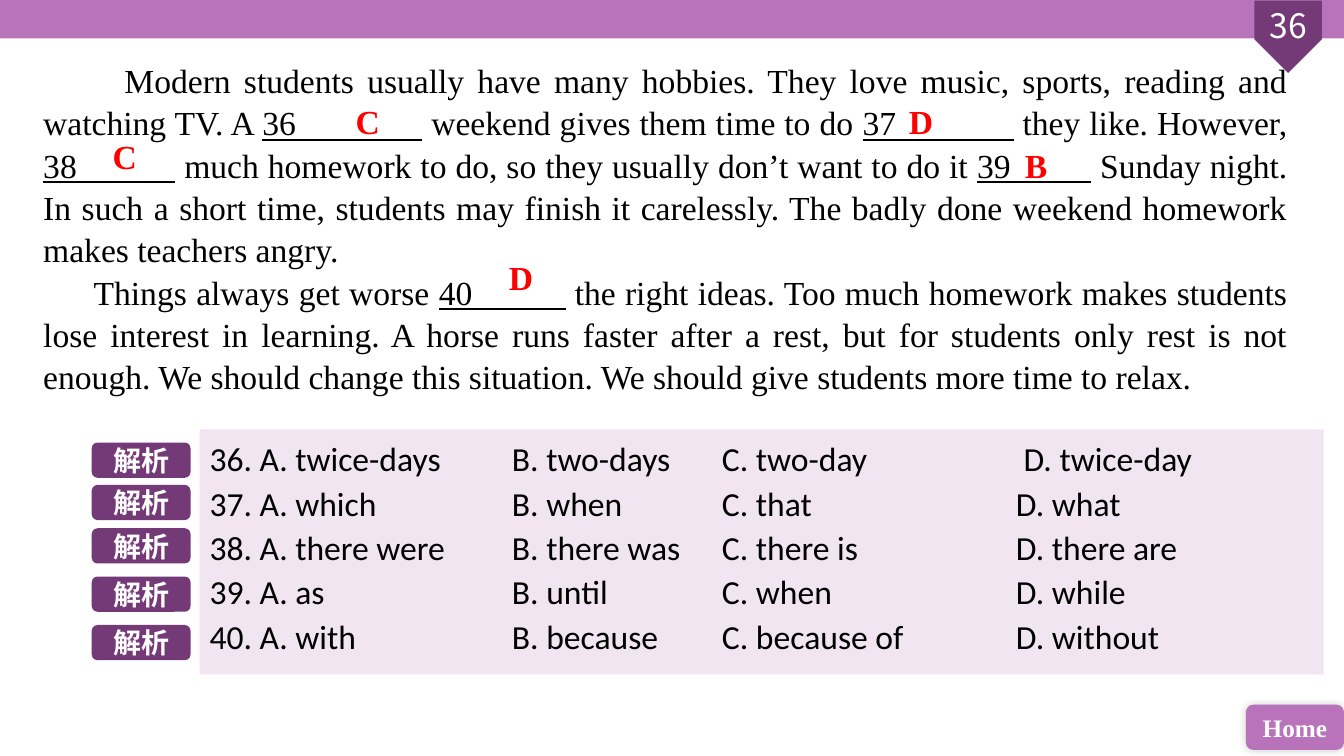
"""Build a cloze exercise slide with a passage, answers and options."""
from dataclasses import dataclass

from lxml import etree
from pptx import Presentation
from pptx.dml.color import RGBColor
from pptx.enum.shapes import MSO_SHAPE
from pptx.enum.text import MSO_ANCHOR, PP_ALIGN
from pptx.oxml.ns import qn
from pptx.util import Pt

RECT = MSO_SHAPE.RECTANGLE
ROUND = MSO_SHAPE.ROUNDED_RECTANGLE
ARROW = MSO_SHAPE.PENTAGON
LEFT, MID, FULL = PP_ALIGN.LEFT, PP_ALIGN.CENTER, PP_ALIGN.JUSTIFY
TOP, MIDDLE = MSO_ANCHOR.TOP, MSO_ANCHOR.MIDDLE


@dataclass(frozen=True)
class Theme:
    light: str = "B873BB"
    dark: str = "743A78"
    pale: str = "F1E5F2"
    white: str = "FFFFFF"
    black: str = "000000"
    red: str = "FF0000"
    serif: str = "Times New Roman"
    sans: str = "Calibri"
    noto: str = "Noto Sans CJK SC"
    large: int = 24
    mid: int = 20
    small: int = 18


theme = Theme()
deck = Presentation()
deck.slide_width, deck.slide_height = Pt(960), Pt(540)
slide = deck.slides.add_slide(deck.slide_layouts[6])


def block(box, kind=None, fill=None):
    """Add a filled shape, or a text box when no kind is given."""
    place = [Pt(v) for v in box]
    if kind is None:
        shape = slide.shapes.add_textbox(*place)
    else:
        shape = slide.shapes.add_shape(kind, *place)
        shape.shadow.inherit = False
        shape.fill.solid()
        shape.fill.fore_color.rgb = RGBColor.from_string(fill)
        shape.line.fill.background()
    shape.text_frame.word_wrap = True
    return shape


def style(shape, face, size, color, bold=False, align=LEFT, anchor=TOP):
    """Format all the text in a shape."""
    shape.text_frame.vertical_anchor = anchor
    for para in shape.text_frame.paragraphs:
        para.alignment = align
        for run in para.runs:
            run.font.name, run.font.size, run.font.bold = face, Pt(size), bold
            run.font.color.rgb = RGBColor.from_string(color)


block((0, 0, 960, 27.4), RECT, theme.light)
badge = block((894.2, 2.2, 51.8, 48.2), ARROW, theme.dark)
badge.rotation = 90
number = block((884.9, 0, 70.6, 36))
number.text_frame.text = "36"
style(number, theme.noto, theme.large, theme.white, align=MID)

home = block((889.9, 503.3, 70.1, 32.4), ROUND, theme.light)
home.text_frame.text = "Home"
style(home, theme.serif, theme.small, theme.white, True, MID, MIDDLE)
glow = home._element.spPr.find(qn("a:effectLst"))
outer = etree.SubElement(glow, qn("a:outerShdw"), blurRad=str(Pt(6)), dist="0")
tint = etree.SubElement(outer, qn("a:srgbClr"), val=theme.black)
etree.SubElement(tint, qn("a:alpha"), val="20000")

story = [
    (58, [
        "Modern students usually have many hobbies. They love music, sports, "
        "reading and watching TV. A ",
        "36".ljust(16),
        " weekend gives them time to do ",
        "37".ljust(15),
        " they like. However, ",
        "38".ljust(13),
        " much homework to do, so they usually don’t want to do it ",
        "39".ljust(11),
        " Sunday night. In such a short time, students may finish it "
        "carelessly. The badly done weekend homework makes teachers angry.",
    ]),
    (36, [
        "Things always get worse ",
        "40".ljust(12),
        " the right ideas. Too much homework makes students lose interest in "
        "learning. A horse runs faster after a rest, but for students only "
        "rest is not enough. We should change this situation. We should give "
        "students more time to relax.",
    ]),
]
passage = block((23.8, 33.1, 902.9, 244.8))
frame = passage.text_frame
frame.margin_top = Pt(8.4)
frame.add_paragraph()
for para, (indent, parts) in zip(frame.paragraphs, story):
    para.line_spacing = 1.05
    para._p.get_or_add_pPr().set("indent", str(Pt(indent)))
    for i, part in enumerate(parts):
        run = para.add_run()
        run.text = part
        run.font.underline = i % 2 == 1
style(passage, theme.serif, theme.large, theme.black, align=FULL)

options = [
    ("36. A. twice-days", "B. two-days", "C. two-day", " D. twice-day"),
    ("37. A. which", "B. when", "C. that", "D. what"),
    ("38. A. there were", "B. there was", "C. there is", "D. there are"),
    ("39. A. as", "B. until", "C. when", "D. while"),
    ("40. A. with", "B. because", "C. because of", "D. without"),
]
panel = block((142.6, 306.7, 802.8, 175), RECT, theme.pale)
panel.text_frame.text = "\n".join("\t".join(row) for row in options)
style(panel, theme.sans, theme.large, theme.black)
for para in panel.text_frame.paragraphs:
    para.line_spacing = 1.1
    tabs = etree.SubElement(para._p.get_or_add_pPr(), qn("a:tabLst"))
    for stop in (216, 366, 576):
        etree.SubElement(tabs, qn("a:tab"), pos=str(Pt(stop)), algn="l")

answers = [
    ("C", 247, 68.4),
    ("D", 642.2, 68.4),
    ("C", 73.4, 93.6),
    ("B", 725, 100.1),
    ("D", 356.4, 180),
]
for letter, left, top in answers:
    answer = block((left, top, 35.3, 36))
    answer.text_frame.text = letter
    style(answer, theme.serif, theme.large, theme.red, True)

for top in (316.1, 346.3, 377.3, 411.8, 446.4):
    button = block((65.5, top, 70.6, 25.2), ROUND, theme.dark)
    button.text_frame.text = "解析"
    style(button, theme.sans, theme.mid, theme.white, True, MID, MIDDLE)

deck.save("out.pptx")
